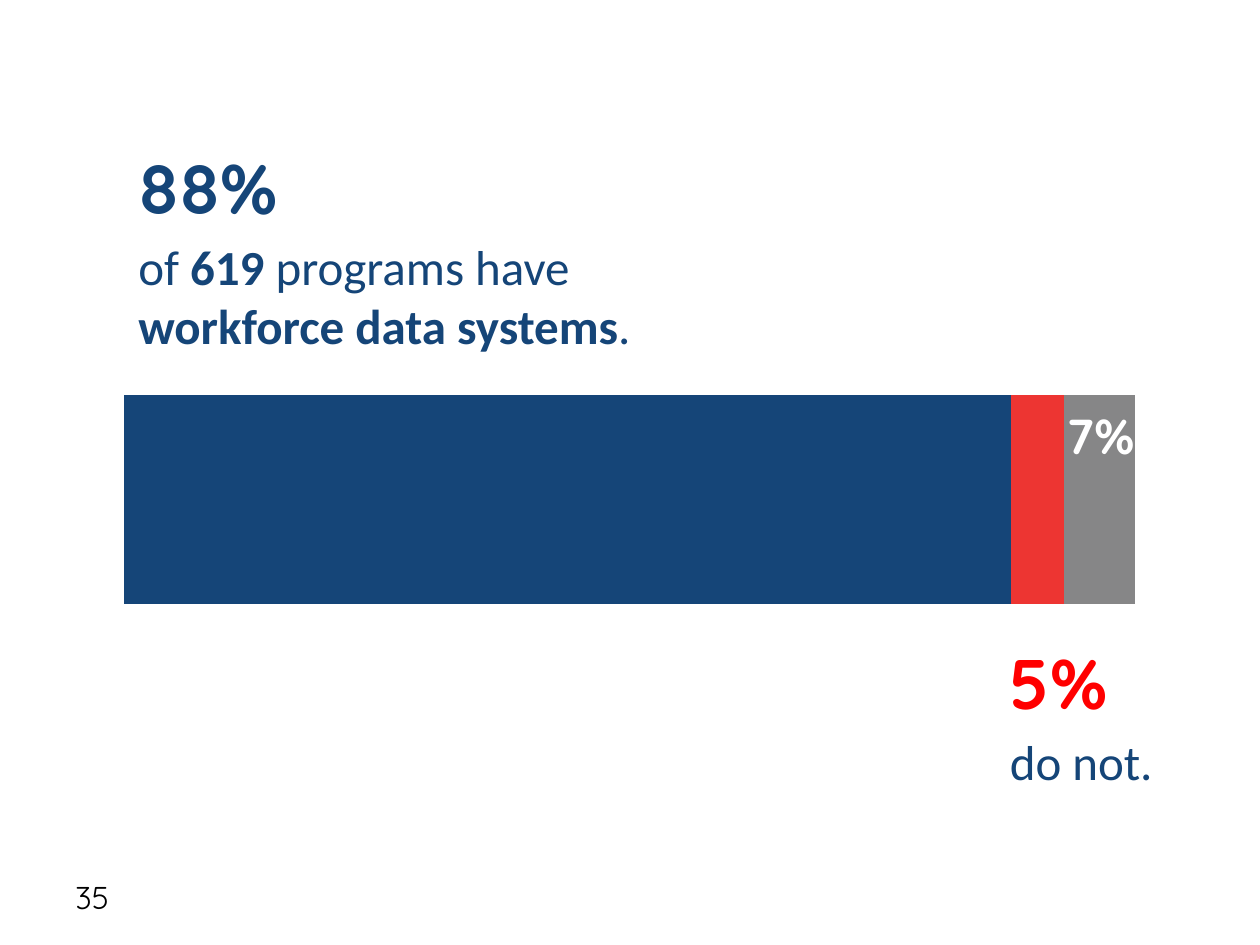
from dataclasses import dataclass

from lxml.etree import SubElement
from pptx import Presentation
from pptx.chart.data import CategoryChartData
from pptx.dml.color import RGBColor
from pptx.enum.chart import XL_CHART_TYPE
from pptx.enum.text import MSO_ANCHOR, MSO_AUTO_SIZE
from pptx.oxml.ns import qn
from pptx.util import Inches, Pt


@dataclass(frozen=True)
class Theme:
    navy: str = "154578"
    red: str = "ED3532"
    alert: str = "FF0000"
    gray: str = "868687"
    white: str = "FFFFFF"
    black: str = "000000"
    body: str = "Calibri"
    head: str = "Quicksand"
    small: int = 18
    mid: int = 28
    big: int = 40


THEME = Theme()
WIDE, HIGH = 10, 7.5
COLS, ROWS = 120, 90


def place(box):
    left, top, width, height = box
    col, row = Inches(WIDE) / COLS, Inches(HIGH) / ROWS
    return [round(n) for n in (left * col, top * row, width * col, height * row)]


def add_text(slide, box, text, size=THEME.mid, font=THEME.body,
             color=THEME.navy, bold=(), anchor=MSO_ANCHOR.TOP, grow=True):
    frame = slide.shapes.add_textbox(*place(box)).text_frame
    frame.word_wrap = True
    frame.vertical_anchor = anchor
    frame.auto_size = MSO_AUTO_SIZE.SHAPE_TO_FIT_TEXT if grow else MSO_AUTO_SIZE.NONE
    parts = [text] if isinstance(text, str) else text
    for index, part in enumerate(parts):
        run = frame.paragraphs[0].add_run()
        run.text = part
        run.font.size = Pt(size)
        run.font.name = font
        run.font.bold = index in bold
        run.font.color.rgb = RGBColor.from_string(color)


def set_plot(chart, **shares):
    area = chart.plots[0]._element.getparent()
    layout = area.find(qn("c:layout"))
    if layout is None:
        layout = area.makeelement(qn("c:layout"))
        area.insert(0, layout)
    manual = SubElement(layout, qn("c:manualLayout"))
    rules = {"layoutTarget": "inner", "xMode": "edge", "yMode": "edge", **shares}
    for tag, value in rules.items():
        SubElement(manual, qn(f"c:{tag}")).set("val", str(value))


def add_bar(slide, box, values, colors):
    data = CategoryChartData()
    data.categories = ["1"]
    for index, value in enumerate(values, 1):
        data.add_series(f"Series {index}", [value])
    chart = slide.shapes.add_chart(
        XL_CHART_TYPE.BAR_STACKED, *place(box), data).chart
    chart.has_legend = False
    chart.has_title = False
    chart.font.name = THEME.body
    chart.font.size = Pt(THEME.small)
    chart.font.color.rgb = RGBColor.from_string(THEME.black)
    axis = chart.value_axis
    axis.minimum_scale, axis.maximum_scale = 0, sum(values)
    axis.major_unit = 23
    axis.has_major_gridlines = False
    axis.tick_labels.number_format = "0%"
    axis.tick_labels.number_format_is_linked = False
    axis.visible = chart.category_axis.visible = False
    plot = chart.plots[0]
    plot.gap_width, plot.overlap = 150, 100
    plot.vary_by_categories = False
    for series, color in zip(plot.series, colors):
        series.format.fill.solid()
        series.format.fill.fore_color.rgb = RGBColor.from_string(color)
    set_plot(chart, x=0.018, y=0.047, w=0.963, h=0.931)


def add_claim(slide, box, share, text, color=THEME.navy, bold=()):
    left, top, width, height = box
    head, gap = 9.2, 8.75
    add_text(slide, (left, top + gap, 53.3, height - gap), text, bold=bold)
    add_text(slide, (left, top, width, head), share, size=THEME.big,
             font=THEME.head, color=color, bold=(0,))


def build(deck):
    slide = deck.slides.add_slide(deck.slide_layouts[6])
    add_bar(slide, (10, 20.25, 100, 53.3), (100, 6, 8),
            (THEME.navy, THEME.red, THEME.gray))
    add_text(slide, (6, 83, 28, 4.8), "35", size=THEME.small, font=THEME.head,
             color=THEME.black, anchor=MSO_ANCHOR.MIDDLE, grow=False)
    add_claim(slide, (12, 13.2, 58, 21.25), "88%",
              ["of ", "619", " programs have ", "workforce data systems", "."],
              bold=(1, 3))
    add_claim(slide, (95, 60.35, 58, 15.6), "5%", "do not.", color=THEME.alert)
    add_text(slide, (100.4, 38, 16, 6.85), "7%", font=THEME.head,
             color=THEME.white, bold=(0,))


def main():
    deck = Presentation()
    deck.slide_width, deck.slide_height = Inches(WIDE), Inches(HIGH)
    build(deck)
    deck.save("out.pptx")


if __name__ == "__main__":
    main()
